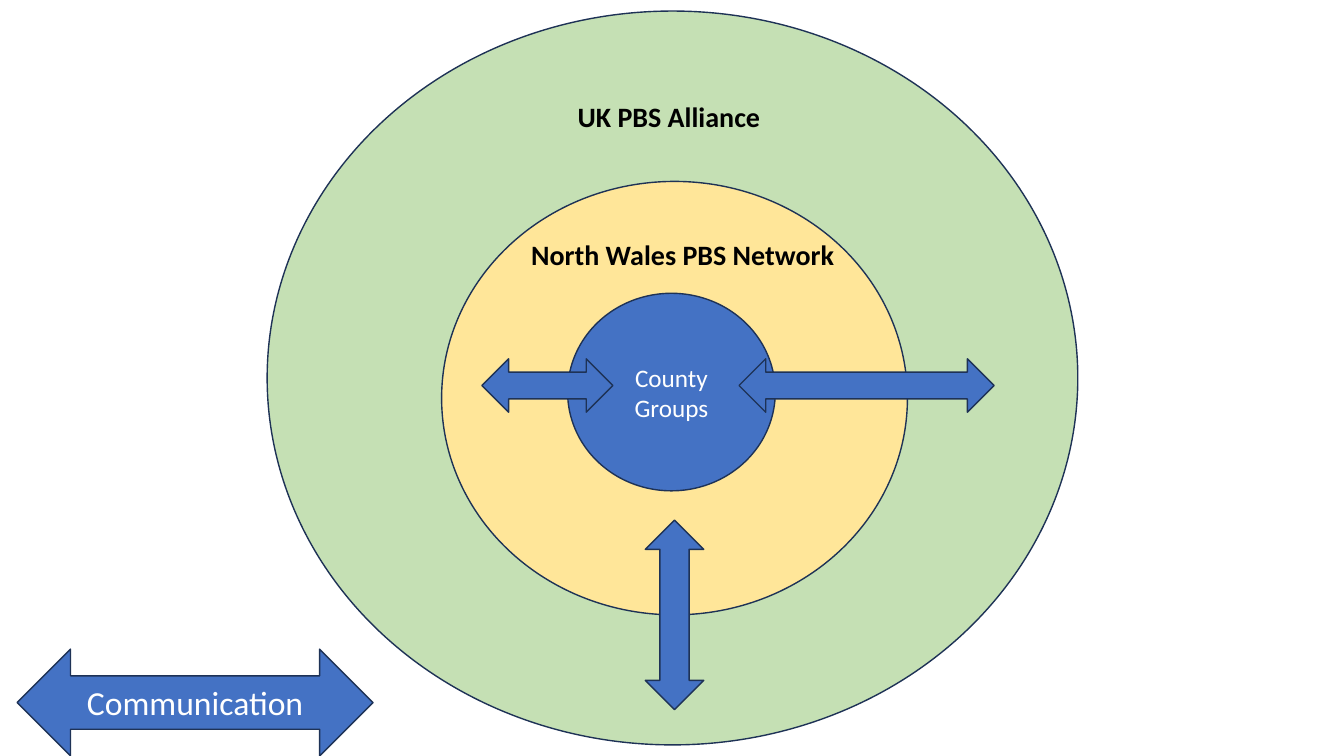
from pptx import Presentation
from pptx.dml.color import RGBColor
from pptx.enum.shapes import MSO_SHAPE
from pptx.enum.text import MSO_ANCHOR, MSO_AUTO_SIZE, PP_ALIGN
from pptx.util import Inches, Pt

OVAL = MSO_SHAPE.OVAL
ACROSS = MSO_SHAPE.LEFT_RIGHT_ARROW
UPRIGHT = MSO_SHAPE.UP_DOWN_ARROW
MIDDLE = MSO_ANCHOR.MIDDLE
TOP = MSO_ANCHOR.TOP
FIT_SHAPE = MSO_AUTO_SIZE.SHAPE_TO_FIT_TEXT
CENTER = PP_ALIGN.CENTER
LEFT = PP_ALIGN.LEFT

FONT = "Calibri"
COLORS = {
    "alliance": "C5E0B4",
    "network": "FFE699",
    "blue": "4472C4",
    "outline": "1E3256",
    "white": "FFFFFF",
    "black": "000000",
}


def color(name):
    """Return the named colour."""
    return RGBColor.from_string(COLORS[name])


def write(shape, text, size, ink, align, anchor, bold=False):
    """Write one formatted paragraph into a shape."""
    frame = shape.text_frame
    frame.word_wrap = True
    frame.vertical_anchor = anchor
    para = frame.paragraphs[0]
    para.alignment = align
    span = para.add_run()
    span.text = text
    span.font.name = FONT
    span.font.size = Pt(size)
    span.font.bold = bold
    span.font.color.rgb = color(ink)


def add_figure(shapes, kind, box, fill, text=None, size=18):
    """Draw an outlined shape, with centred white text if given."""
    figure = shapes.add_shape(kind, *map(Inches, box))
    figure.shadow.inherit = False
    figure.fill.solid()
    figure.fill.fore_color.rgb = color(fill)
    figure.line.color.rgb = color("outline")
    figure.line.width = Pt(1)
    if text:
        write(figure, text, size, "white", CENTER, MIDDLE)


def add_label(shapes, left, top, text):
    """Add the bold name of a circle."""
    label = shapes.add_textbox(*map(Inches, (left, top, 3.39, 0.74)))
    write(label, text, 20, "black", LEFT, TOP, bold=True)
    label.text_frame.auto_size = FIT_SHAPE


def add_circles(page, box):
    """Draw the three nested circles and their names in the box."""
    left, top, width, height = box
    group = page.shapes.add_group_shape().shapes
    add_figure(group, OVAL, box, "alliance")
    add_figure(group, OVAL, (left + 1.73, top + 1.69, 4.62, 4.3), "network")
    add_figure(group, OVAL, (left + 2.98, top + 2.8, 2.06, 1.96), "blue", "County Groups")
    add_label(group, left + 2.52, top + 2.2, "North Wales PBS Network")
    add_label(page.shapes, left + 2.98, top + 0.83, "UK PBS Alliance")


def add_links(page, box):
    """Draw the arrows that link the circles in the box."""
    left, top, width, height = box
    links = [
        (ACROSS, 2.13, 3.45, 1.3, 0.53),
        (ACROSS, 4.68, 3.45, 2.53, 0.53),
        (UPRIGHT, 3.75, 5.05, 0.58, 1.88),
    ]
    for kind, across, down, wide, high in links:
        add_figure(page.shapes, kind, (left + across, top + down, wide, high), "blue")


def add_key(page, box):
    """Draw the arrow that explains the links."""
    add_figure(page.shapes, ACROSS, box, "blue", "Communication", 24)


def main():
    """Build and save the deck."""
    deck = Presentation()
    deck.slide_width = Inches(13.33)
    deck.slide_height = Inches(7.5)
    page = deck.slides.add_slide(deck.slide_layouts[6])
    circles_box = (2.65, 0.11, 8.04, 7.28)
    add_circles(page, circles_box)
    add_links(page, circles_box)
    add_key(page, (0.17, 6.44, 3.53, 1.06))
    deck.save("out.pptx")


if __name__ == "__main__":
    main()
